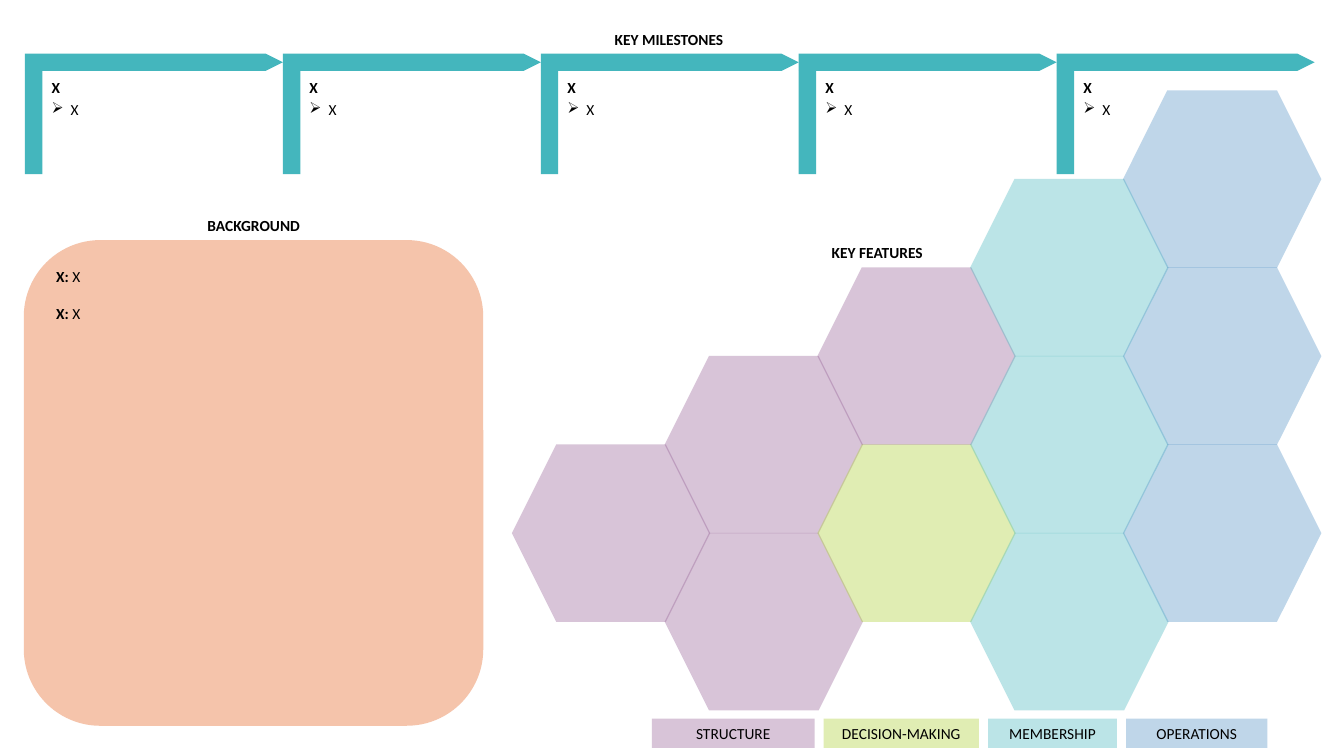
from dataclasses import dataclass

import lxml.etree
import pptx
import pptx.dml.color
import pptx.enum.shapes
import pptx.enum.text
import pptx.oxml.ns
import pptx.shapes.autoshape
import pptx.slide
import pptx.text.text
import pptx.util

Cm = pptx.util.Cm
Pt = pptx.util.Pt
SHAPE = pptx.enum.shapes.MSO_SHAPE
ALIGN = pptx.enum.text.PP_ALIGN
ANCHOR = pptx.enum.text.MSO_ANCHOR


@dataclass(frozen=True)
class Theme:
    font: str = "Calibri"
    size: int = 11
    text: str = "000000"
    teal: str = "44B6BD"
    orange: str = "E66C2D"
    purple: str = "935E94"
    green: str = "AACE2E"
    blue: str = "4E90C4"
    panel_alpha: int = 40
    feature_alpha: int = 36


THEME = Theme()


@dataclass(frozen=True)
class Box:
    left: float
    top: float
    width: float
    height: float

    def lengths(self) -> tuple[int, int, int, int]:
        return Cm(self.left), Cm(self.top), Cm(self.width), Cm(self.height)


@dataclass(frozen=True)
class Milestone:
    title: str
    detail: str


@dataclass(frozen=True)
class Feature:
    label: str
    color: str
    label_width: float
    cells: tuple[tuple[int, int], ...]


MILESTONES = [Milestone("X", "X")] * 5
BACKGROUND = [("X: ", "X"), ("X: ", "X")]
FEATURES = [
    Feature("STRUCTURE", THEME.purple, 4.1, ((0, 4), (1, 3), (1, 5), (2, 2))),
    Feature("DECISION-MAKING", THEME.green, 3.91, ((2, 4),)),
    Feature("MEMBERSHIP", THEME.teal, 3.25, ((3, 1), (3, 3), (3, 5))),
    Feature("OPERATIONS", THEME.blue, 3.56, ((4, 0), (4, 2), (4, 4))),
]


def format_runs(p: pptx.text.text._Paragraph, bold: bool = False) -> None:
    for r in p.runs:
        r.font.name = THEME.font
        r.font.size = Pt(THEME.size)
        r.font.bold = bold
        r.font.color.rgb = pptx.dml.color.RGBColor.from_string(THEME.text)


def add_block(
    slide: pptx.slide.Slide, kind: SHAPE, box: Box, color: str, alpha: int = 100
) -> pptx.shapes.autoshape.Shape:
    s = slide.shapes.add_shape(kind, *box.lengths())
    s.shadow.inherit = False
    s.line.fill.background()
    s.fill.solid()
    s.fill.fore_color.rgb = pptx.dml.color.RGBColor.from_string(color)
    if alpha < 100:
        qn = pptx.oxml.ns.qn
        clr = s.element.spPr.find(f"{qn('a:solidFill')}/{qn('a:srgbClr')}")
        lxml.etree.SubElement(clr, qn("a:alpha"), val=str(alpha * 1000))
    return s


def add_heading(slide: pptx.slide.Slide, text: str, box: Box) -> None:
    tf = slide.shapes.add_textbox(*box.lengths()).text_frame
    tf.word_wrap = True
    tf.text = text
    p = tf.paragraphs[0]
    p.alignment = ALIGN.CENTER
    format_runs(p, bold=True)


def add_background(slide: pptx.slide.Slide) -> None:
    panel = Box(0.6, 6.05, 11.58, 12.24)
    s = add_block(slide, SHAPE.ROUNDED_RECTANGLE, panel, THEME.orange, THEME.panel_alpha)
    tf = s.text_frame
    tf.vertical_anchor = ANCHOR.TOP
    for i, (term, detail) in enumerate(BACKGROUND):
        p = tf.add_paragraph() if i else tf.paragraphs[0]
        p.alignment = ALIGN.JUSTIFY
        p.space_after = Pt(13)
        for text in (term, detail):
            p.add_run().text = text
        format_runs(p)
        p.runs[0].font.bold = True
    add_heading(slide, "BACKGROUND", Box(0.63, 5.33, 11.53, 0.76))


def add_bullet(p: pptx.text.text._Paragraph, char: str, indent: float) -> None:
    pPr = p._p.get_or_add_pPr()
    pPr.set("marL", str(Cm(indent)))
    pPr.set("indent", str(-Cm(indent)))
    lxml.etree.SubElement(pPr, pptx.oxml.ns.qn("a:buChar"), char=char)


def add_milestone(slide: pptx.slide.Slide, item: Milestone, left: float) -> None:
    top, pitch, bar = 1.35, 6.5, 0.44
    arrow = add_block(slide, SHAPE.PENTAGON, Box(left, top, pitch, bar), THEME.teal)
    arrow.adjustments[0] = 1.0
    add_block(slide, SHAPE.RECTANGLE, Box(left, top + bar, bar, 2.6), THEME.teal)
    note = Box(left + 0.54, top + 0.48, 5.94, 4.4)
    tf = slide.shapes.add_textbox(*note.lengths()).text_frame
    tf.word_wrap = True
    tf.margin_left = tf.margin_right = tf.margin_top = tf.margin_bottom = Cm(0.13)
    tf.text = item.title
    p = tf.paragraphs[0]
    p.space_after = Pt(3)
    format_runs(p, bold=True)
    p = tf.add_paragraph()
    p.text = item.detail
    add_bullet(p, "➢", 0.48)
    format_runs(p)


def add_milestones(slide: pptx.slide.Slide) -> None:
    for i, item in enumerate(MILESTONES):
        add_milestone(slide, item, 0.63 + 6.5 * i)
    add_heading(slide, "KEY MILESTONES", Box(0.63, 0.63, 32.46, 0.74))


def add_features(slide: pptx.slide.Slide) -> None:
    label_left = 16.43
    for feature in FEATURES:
        for column, row in feature.cells:
            cell = Box(12.9 + 3.85 * column, 2.28 + 2.23 * row, 5, 4.47)
            add_block(slide, SHAPE.HEXAGON, cell, feature.color, THEME.feature_alpha)
        label = Box(label_left, 18.11, feature.label_width, 0.74)
        s = add_block(slide, SHAPE.RECTANGLE, label, feature.color, THEME.feature_alpha)
        s.text_frame.text = feature.label
        p = s.text_frame.paragraphs[0]
        p.alignment = ALIGN.CENTER
        format_runs(p)
        label_left += feature.label_width + 0.23
    add_heading(slide, "KEY FEATURES", Box(17.78, 5.99, 8.66, 0.69))


def main() -> None:
    prs = pptx.Presentation()
    prs.slide_width, prs.slide_height = Cm(33.87), Cm(19.05)
    slide = prs.slides.add_slide(prs.slide_layouts[6])
    add_background(slide)
    add_milestones(slide)
    add_features(slide)
    prs.save("out.pptx")


if __name__ == "__main__":
    main()
